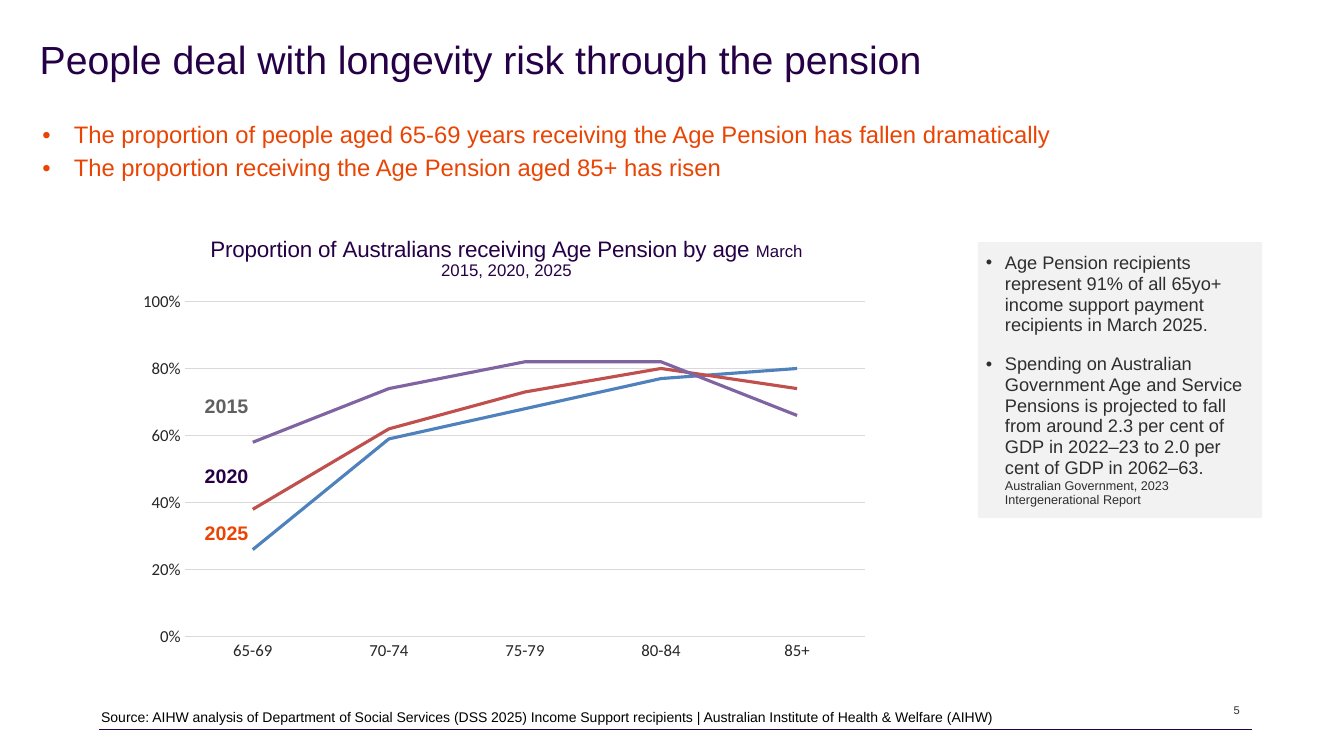
from dataclasses import dataclass

from lxml.etree import SubElement
from pptx import Presentation
from pptx.chart.data import CategoryChartData
from pptx.dml.color import RGBColor
from pptx.enum.chart import XL_CHART_TYPE, XL_TICK_MARK
from pptx.enum.shapes import MSO_CONNECTOR, MSO_SHAPE
from pptx.enum.text import MSO_ANCHOR, MSO_AUTO_SIZE, PP_ALIGN
from pptx.oxml import parse_xml
from pptx.oxml.ns import nsdecls, qn
from pptx.util import Cm, Pt


@dataclass(frozen=True)
class Theme:
    font: str = "Arial"
    axis_font: str = "Calibri"
    navy: str = "260046"
    orange: str = "EA4403"
    grey: str = "606060"
    ink: str = "2E2E2E"
    axis_ink: str = "262626"
    black: str = "000000"
    panel: str = "F2F2F2"
    grid: str = "D9D9D9"
    lines: tuple = ("4F81BD", "C0504D", "8064A2")
    title: float = 28
    lead: float = 17
    chart_title: float = 16
    year: float = 14
    body: float = 13
    axis: float = 12
    source: float = 10
    small: float = 9
    number: float = 8


THEME = Theme()


def rgb(code):
    return RGBColor.from_string(code)


def style(font, size, color, name=THEME.font, bold=False):
    font.size, font.name, font.bold = Pt(size), name, bold
    font.color.rgb = rgb(color)


def write(frame, paras, size, color, bold=False, align=PP_ALIGN.LEFT,
          anchor=MSO_ANCHOR.TOP, inset=(0.25, 0.13), spacing=0.95,
          before=0, after=0, hang=0):
    """Fill a frame; each paragraph is a list of (text, size or None) runs."""
    frame.word_wrap = True
    frame.auto_size = MSO_AUTO_SIZE.NONE
    frame.vertical_anchor = anchor
    frame.margin_left = frame.margin_right = Cm(inset[0])
    frame.margin_top = frame.margin_bottom = Cm(inset[1])
    for i, runs in enumerate(paras):
        para = frame.paragraphs[0] if i == 0 else frame.add_paragraph()
        para.alignment, para.line_spacing = align, spacing
        para.space_before = Pt(before if i else 0)
        para.space_after = Pt(after)
        if hang:
            props = para._p.get_or_add_pPr()
            props.set("marL", str(Cm(hang)))
            props.set("indent", str(-Cm(hang)))
            SubElement(props, qn("a:buFont")).set("typeface", THEME.font)
            SubElement(props, qn("a:buChar")).set("char", "•")
        for text, run_size in runs:
            run = para.add_run()
            run.text = text
            style(run.font, run_size or size, color, bold=bold)


def label(slide, box, text, size, color, **form):
    shape = slide.shapes.add_textbox(*map(Cm, box))
    write(shape.text_frame, [[(text, None)]], size, color, **form)


def add_title(slide, box):
    title = slide.shapes.title
    title.left, title.top, title.width, title.height = map(Cm, box)
    text = "People deal with longevity risk through the pension"
    write(title.text_frame, [[(text, None)]], THEME.title, THEME.navy,
          inset=(0, 0), spacing=0.9)


def add_lead(slide, box):
    points = (
        "The proportion of people aged 65-69 years receiving the Age Pension has fallen dramatically",
        "The proportion receiving the Age Pension aged 85+ has risen",
    )
    shape = slide.shapes.add_textbox(*map(Cm, box))
    write(shape.text_frame, [[(point, None)] for point in points],
          THEME.lead, THEME.orange, before=2, after=2, hang=0.79)


def place(parent, index, inner=False, **parts):
    """Give a chart part a fixed place, in fractions of the chart."""
    for old in parent.findall(qn("c:layout")):
        parent.remove(old)
    target = '<c:layoutTarget val="inner"/>' if inner else ""
    modes = "".join(f'<c:{key}Mode val="edge"/>' for key in "xy")
    sizes = "".join(f'<c:{key} val="{val}"/>' for key, val in parts.items())
    parent.insert(index, parse_xml(
        f'<c:layout {nsdecls("c")}><c:manualLayout>{target}{modes}{sizes}'
        '</c:manualLayout></c:layout>'))


def add_lines(slide, box):
    data = CategoryChartData(number_format="0%")
    data.categories = ["65-69", "70-74", "75-79", "80-84", "85+"]
    data.add_series("2025", (0.26, 0.59, 0.68, 0.77, 0.8))
    data.add_series("2020", (0.38, 0.62, 0.73, 0.8, 0.74))
    data.add_series("2015", (0.58, 0.74, 0.82, 0.82, 0.66))
    chart = slide.shapes.add_chart(XL_CHART_TYPE.LINE, *map(Cm, box), data).chart
    chart.has_legend = False
    style(chart.font, THEME.source, THEME.black, THEME.axis_font)

    para = chart.chart_title.text_frame.paragraphs[0]
    for text, size in (
            ("Proportion of Australians receiving Age Pension by age ", THEME.chart_title),
            ("March 2015, 2020, 2025", THEME.axis)):
        run = para.add_run()
        run.text = text
        style(run.font, size, THEME.navy)
    chart.chart_title.include_in_layout = False
    place(chart.chart_title._element, 1, x=0.11, y=0.05)
    place(chart._chartSpace.chart.plotArea, 0, inner=True,
          x=0.08, y=0.2, w=0.9, h=0.73)

    plot = chart.plots[0]
    plot.vary_by_categories = False
    for line, color in zip(plot.series, THEME.lines):
        line.smooth = False
        line.format.line.color.rgb = rgb(color)
        line.format.line.width = Pt(2.25)

    ages, share = chart.category_axis, chart.value_axis
    for axis in (ages, share):
        axis.major_tick_mark = axis.minor_tick_mark = XL_TICK_MARK.NONE
        style(axis.tick_labels.font, THEME.axis, THEME.axis_ink, THEME.axis_font)
    share.minimum_scale, share.maximum_scale, share.major_unit = 0, 1, 0.2
    share.tick_labels.number_format = "0%"
    share.tick_labels.number_format_is_linked = False
    share.format.line.fill.background()
    for rule in (ages.format.line, share.major_gridlines.format.line):
        rule.color.rgb = rgb(THEME.grid)
        rule.width = Pt(0.75)


def add_chart(slide, box):
    """Draw the line chart with a year label beside each line's start."""
    add_lines(slide, box)
    left, top = box[:2]
    for year, drop, color in (("2015", 4.55, THEME.grey),
                              ("2020", 6.32, THEME.navy),
                              ("2025", 7.77, THEME.orange)):
        label(slide, (left + 1.63, top + drop, 1.75, 0.84), year, THEME.year,
              color, bold=True, align=PP_ALIGN.RIGHT)


def add_panel(slide, box):
    panel = slide.shapes.add_shape(MSO_SHAPE.RECTANGLE, *map(Cm, box))
    panel.shadow.inherit = False
    panel.fill.solid()
    panel.fill.fore_color.rgb = rgb(THEME.panel)
    panel.line.fill.background()
    write(panel.text_frame, [
        [("Age Pension recipients represent 91% of all 65yo+ income support "
          "payment recipients in March 2025.", None)],
        [("Spending on Australian Government Age and Service Pensions is "
          "projected to fall from around 2.3 per cent of GDP in 2022–23 to "
          "2.0 per cent of GDP in 2062–63. ", None),
         ("Australian Government, 2023 Intergenerational Report", THEME.small)],
    ], THEME.body, THEME.ink, anchor=MSO_ANCHOR.MIDDLE, inset=(0.2, 0.2),
        before=8, after=5, hang=0.48)


def add_footer(slide, box):
    left, top, width, height = box
    base = top + height
    rule = slide.shapes.add_connector(
        MSO_CONNECTOR.STRAIGHT, *map(Cm, (left, base, left + width, base)))
    rule.line.color.rgb = rgb(THEME.navy)
    rule.line.width = Pt(0.5)
    SubElement(rule._element.spPr, qn("a:effectLst"))
    form = dict(anchor=MSO_ANCHOR.BOTTOM, inset=(0, 0))
    label(slide, (left + 0.05, base - 0.48, 27.3, 0.38),
          "Source: AIHW analysis of Department of Social Services (DSS 2025) "
          "Income Support recipients | Australian Institute of Health & Welfare (AIHW)",
          THEME.source, THEME.black, **form)
    label(slide, (left + width - 0.91, top, 0.61, 0.38), "5",
          THEME.number, THEME.ink, align=PP_ALIGN.RIGHT, **form)


def main():
    deck = Presentation()
    deck.slide_width, deck.slide_height = Cm(33.86), Cm(19.05)
    slide = deck.slides.add_slide(deck.slide_layouts[5])
    add_title(slide, (1, 1.02, 29.2, 1.35))
    add_lead(slide, (0.82, 2.95, 32.28, 1.7))
    add_chart(slide, (3.13, 5.28, 19.05, 11.58))
    add_panel(slide, (24.64, 6.1, 7.16, 6.96))
    add_footer(slide, (2.5, 17.7, 29.04, 0.69))
    deck.save("out.pptx")


if __name__ == "__main__":
    main()
